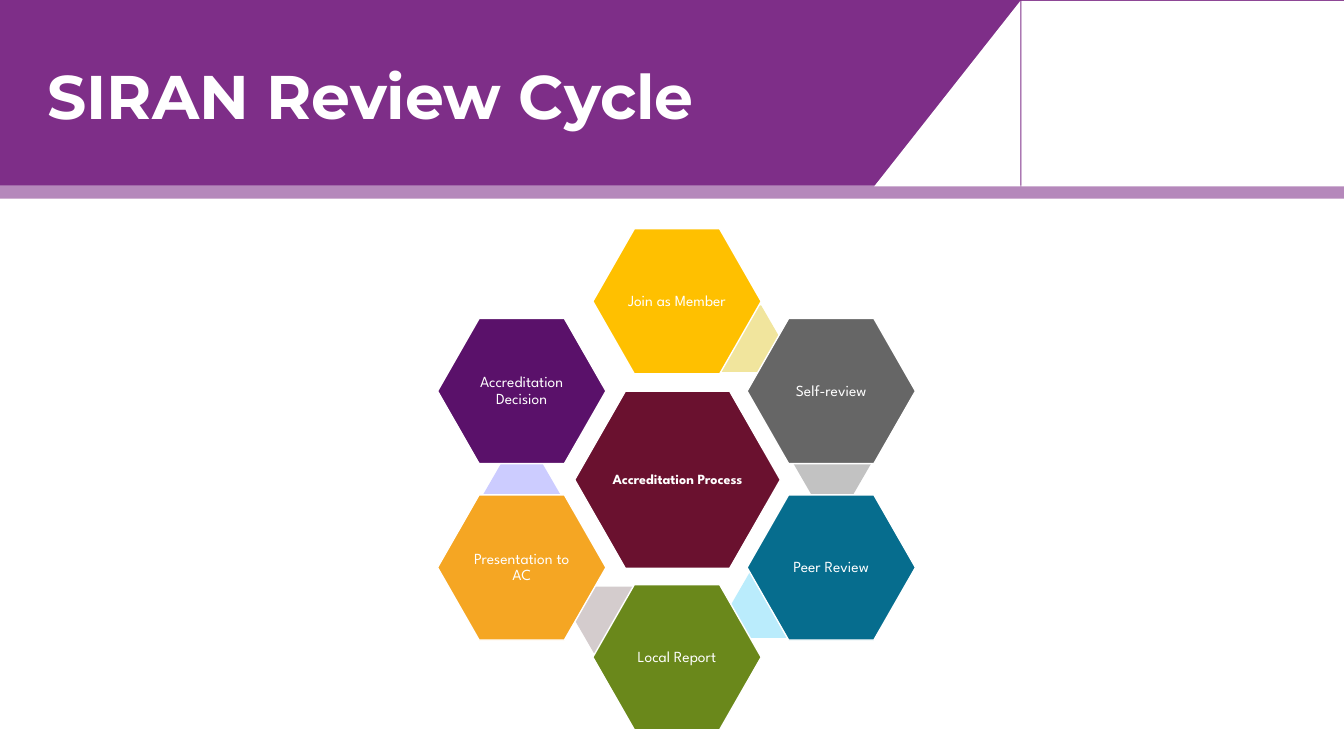
from dataclasses import dataclass

from lxml.etree import SubElement
from pptx import Presentation
from pptx.dml.color import RGBColor
from pptx.enum.shapes import MSO_SHAPE
from pptx.enum.text import MSO_ANCHOR, PP_ALIGN
from pptx.oxml.ns import qn
from pptx.shapes.autoshape import Shape
from pptx.text.text import TextFrame
from pptx.util import Emu, Pt

EMU_PER_PX = 9144
WHITE = "FFFFFF"
PURPLE = "7E2E88"
STEP_SIZE = (167, 144)
LINK_SIZE = (77, 66)


@dataclass(frozen=True)
class Box:
    left: int
    top: int
    width: int
    height: int


@dataclass(frozen=True)
class Step:
    label: str
    fill: str
    left: int
    top: int


@dataclass(frozen=True)
class Link:
    """Pale hexagon that shows between two neighbouring steps."""
    fill: str
    left: int
    top: int


CYCLE = [
    Link("F1E59D", 697, 303),
    Step("Join as Member", "FFC000", 588, 227),
    Link("C2C2C2", 787, 427),
    Step("Self-review", "666666", 741, 316),
    Link("BAECFC", 725, 567),
    Step("Peer Review", "066D8E", 741, 491),
    Link("D4CCCD", 570, 582),
    Step("Local Report", "6A881B", 588, 580),
    Link("CCCCFF", 479, 458),
    Step("Presentation to AC", "F5A623", 434, 491),
    Step("Accreditation Decision", "5A116A", 434, 316),
]


def px(length: int) -> Emu:
    return Emu(length * EMU_PER_PX)


def color(value: str) -> RGBColor:
    return RGBColor.from_string(value)


def add_block(shapes, kind: MSO_SHAPE, box: Box, fill: str) -> Shape:
    block = shapes.add_shape(
        kind, px(box.left), px(box.top), px(box.width), px(box.height))
    block.shadow.inherit = False
    block.fill.solid()
    block.fill.fore_color.rgb = color(fill)
    block.line.fill.background()
    return block


def write(frame: TextFrame, text: str, font: str, size: int, bold: bool,
          align: PP_ALIGN) -> None:
    frame.word_wrap = True
    frame.vertical_anchor = MSO_ANCHOR.MIDDLE
    paragraph = frame.paragraphs[0]
    paragraph.alignment = align
    paragraph.line_spacing = 0.9
    run = paragraph.add_run()
    run.text = text
    run.font.name = font
    run.font.size = Pt(size)
    run.font.bold = bold
    run.font.color.rgb = color(WHITE)


def add_labelled_hexagon(shapes, box: Box, fill: str, label: str, size: int,
                         inset: int, bold: bool = False) -> None:
    hexagon = add_block(shapes, MSO_SHAPE.HEXAGON, box, fill)
    hexagon.adjustments[0] = 0.286
    hexagon.line.color.rgb = color(WHITE)
    hexagon.line.width = Pt(1)
    frame = hexagon.text_frame
    frame.margin_left = frame.margin_right = px(inset)
    frame.margin_top = frame.margin_bottom = px(inset)
    write(frame, label, "League Spartan", size, bold, PP_ALIGN.CENTER)


def add_header(shapes) -> None:
    add_block(shapes, MSO_SHAPE.RECTANGLE, Box(0, 0, 1333, 197), PURPLE)
    stripe = add_block(
        shapes, MSO_SHAPE.RECTANGLE, Box(0, 184, 1333, 20), WHITE)
    stripe_color = stripe.element.spPr.find(f".//{qn('a:srgbClr')}")
    SubElement(stripe_color, qn("a:alpha"), val="43000")
    slant = add_block(
        shapes, MSO_SHAPE.RIGHT_TRIANGLE, Box(867, 1, 145, 184), WHITE)
    slant.element.spPr.find(qn("a:xfrm")).set("flipH", "1")
    add_block(shapes, MSO_SHAPE.RECTANGLE, Box(1013, 1, 320, 184), WHITE)
    title = shapes.add_textbox(px(37), px(26), px(871), px(145))
    write(title.text_frame, "SIRAN Review Cycle", "Montserrat", 44, True,
          PP_ALIGN.LEFT)


def add_cycle(shapes) -> None:
    add_labelled_hexagon(shapes, Box(570, 388, 204, 176), "6A112F",
                         "Accreditation Process", 10, 1, bold=True)
    for part in CYCLE:
        if isinstance(part, Step):
            add_labelled_hexagon(shapes, Box(part.left, part.top, *STEP_SIZE),
                                 part.fill, part.label, 11, 2)
        else:
            link = add_block(shapes, MSO_SHAPE.HEXAGON,
                             Box(part.left, part.top, *LINK_SIZE), part.fill)
            link.adjustments[0] = 0.289


def main() -> None:
    deck = Presentation()
    deck.slide_width, deck.slide_height = px(1333), px(750)
    slide = deck.slides.add_slide(deck.slide_layouts[6])
    add_header(slide.shapes)
    add_cycle(slide.shapes.add_group_shape().shapes)
    deck.save("out.pptx")


if __name__ == "__main__":
    main()
